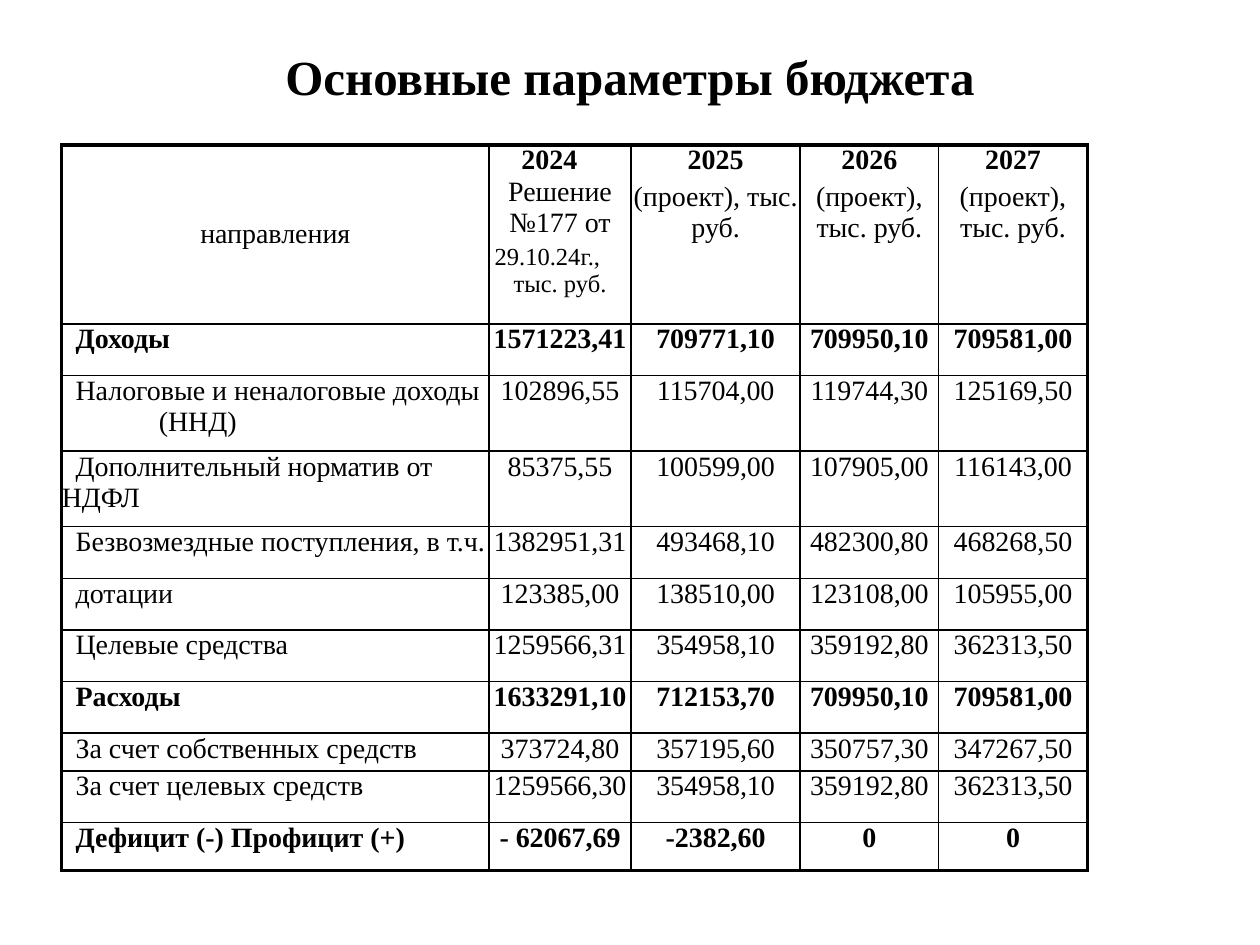
import pptx
import pptx.dml.color
import pptx.enum.text
import pptx.oxml.ns
import pptx.util
from lxml import etree

Inches = pptx.util.Inches
Pt = pptx.util.Pt
ALIGN = pptx.enum.text.PP_ALIGN
ANCHOR = pptx.enum.text.MSO_ANCHOR

THEME = {
    "font": "Times New Roman",
    "ink": "000000",
    "title": 28,
    "body": 16,
    "note": 14,
    "gap": 3.2,
    "indent": 0.11,
    "outer": 2.25,
    "inner": 1,
}

TITLE = "Основные параметры бюджета"
PROJECT_YEARS = [
    ("2025", "(проект), тыс. руб."),
    ("2026", "(проект), тыс. руб."),
    ("2027", "(проект), тыс. руб."),
]
BASE_YEAR = [
    ("2024", {"bold": True, "right": 0.17}),
    ("Решение №177 от", {}),
    ("29.10.24г.,", {"size": THEME["note"], "right": 0.2, "before": THEME["gap"]}),
    ("тыс. руб.", {"size": THEME["note"]}),
]
ROWS = [
    ("Доходы", "1571223,41", "709771,10", "709950,10", "709581,00"),
    ("Налоговые и неналоговые доходы\n(ННД)", "102896,55", "115704,00", "119744,30", "125169,50"),
    ("Дополнительный норматив от НДФЛ", "85375,55", "100599,00", "107905,00", "116143,00"),
    ("Безвозмездные поступления, в т.ч.", "1382951,31", "493468,10", "482300,80", "468268,50"),
    ("дотации", "123385,00", "138510,00", "123108,00", "105955,00"),
    ("Целевые средства", "1259566,31", "354958,10", "359192,80", "362313,50"),
    ("Расходы", "1633291,10", "712153,70", "709950,10", "709581,00"),
    ("За счет собственных средств", "373724,80", "357195,60", "350757,30", "347267,50"),
    ("За счет целевых средств", "1259566,30", "354958,10", "359192,80", "362313,50"),
    ("Дефицит (-) Профицит (+)", "- 62067,69", "-2382,60", "0", "0"),
]
TOTALS = {"Доходы", "Расходы", "Дефицит (-) Профицит (+)"}
COLUMN_WIDTHS = [3.39, 1.13, 1.34, 1.1, 1.18]
ROW_HEIGHTS = [1.42, 0.41, 0.6, 0.6, 0.41, 0.41, 0.41, 0.41, 0.3, 0.41, 0.38]


def write(frame, text, size=THEME["body"], bold=False, align=ALIGN.CENTER,
          indent=0, right=0, before=0):
    paragraph = frame.paragraphs[0]
    if paragraph.runs:
        paragraph = frame.add_paragraph()
    paragraph.alignment = align
    paragraph.space_before = Pt(before)
    properties = paragraph._p.get_or_add_pPr()
    properties.set("marL", "0")
    properties.set("marR", str(Inches(right)))
    properties.set("indent", str(Inches(indent)))
    run = paragraph.add_run()
    run.text = text
    run.font.name = THEME["font"]
    run.font.size = Pt(size)
    run.font.bold = bold
    run.font.color.rgb = pptx.dml.color.RGBColor.from_string(THEME["ink"])


def set_border(cell, side, width):
    qn = pptx.oxml.ns.qn
    line = etree.SubElement(cell._tc.get_or_add_tcPr(), qn("a:ln" + side), w=str(Pt(width)))
    fill = etree.SubElement(line, qn("a:solidFill"))
    etree.SubElement(fill, qn("a:srgbClr"), val=THEME["ink"])


def format_cell(cell, row, column):
    cell.margin_left = cell.margin_right = cell.margin_top = cell.margin_bottom = 0
    cell.vertical_anchor = ANCHOR.MIDDLE if row == column == 0 else ANCHOR.TOP
    edges = {
        "L": column == 0,
        "R": column == len(COLUMN_WIDTHS) - 1,
        "T": row == 0,
        "B": row == len(ROW_HEIGHTS) - 1,
    }
    for side, is_outer in edges.items():
        set_border(cell, side, THEME["outer"] if is_outer else THEME["inner"])
    cell.fill.background()


def fill_header(table):
    write(table.cell(0, 0).text_frame, "направления")
    for text, options in BASE_YEAR:
        write(table.cell(0, 1).text_frame, text, **options)
    for column, (year, note) in enumerate(PROJECT_YEARS, start=2):
        frame = table.cell(0, column).text_frame
        write(frame, year, bold=True)
        write(frame, note, before=THEME["gap"])


def fill_body(table):
    for row, (label, *values) in enumerate(ROWS, start=1):
        bold = label in TOTALS
        for line, text in enumerate(label.split("\n")):
            write(table.cell(row, 0).text_frame, text, bold=bold, align=ALIGN.LEFT,
                  indent=THEME["indent"] * (7 if line else 1))
        for column, value in enumerate(values, start=1):
            write(table.cell(row, column).text_frame, value, bold=bold)


def main():
    presentation = pptx.Presentation()
    presentation.slide_width = Inches(10)
    presentation.slide_height = Inches(7.5)
    slide = presentation.slides.add_slide(presentation.slide_layouts[6])

    title = slide.shapes.add_textbox(Inches(0.5), Inches(0.3), Inches(9), Inches(0.61))
    title.text_frame.word_wrap = True
    title.text_frame.vertical_anchor = ANCHOR.MIDDLE
    write(title.text_frame, TITLE, size=THEME["title"], bold=True)

    frame = slide.shapes.add_table(
        len(ROW_HEIGHTS), len(COLUMN_WIDTHS), Inches(0.49), Inches(1.15),
        Inches(sum(COLUMN_WIDTHS)), Inches(sum(ROW_HEIGHTS)))
    table = frame.table
    table.first_row = table.horz_banding = False
    for column, width in zip(table.columns, COLUMN_WIDTHS):
        column.width = Inches(width)
    for row, height in zip(table.rows, ROW_HEIGHTS):
        row.height = Inches(height)
    for row in range(len(ROW_HEIGHTS)):
        for column in range(len(COLUMN_WIDTHS)):
            format_cell(table.cell(row, column), row, column)
    fill_header(table)
    fill_body(table)
    presentation.save("out.pptx")


if __name__ == "__main__":
    main()
